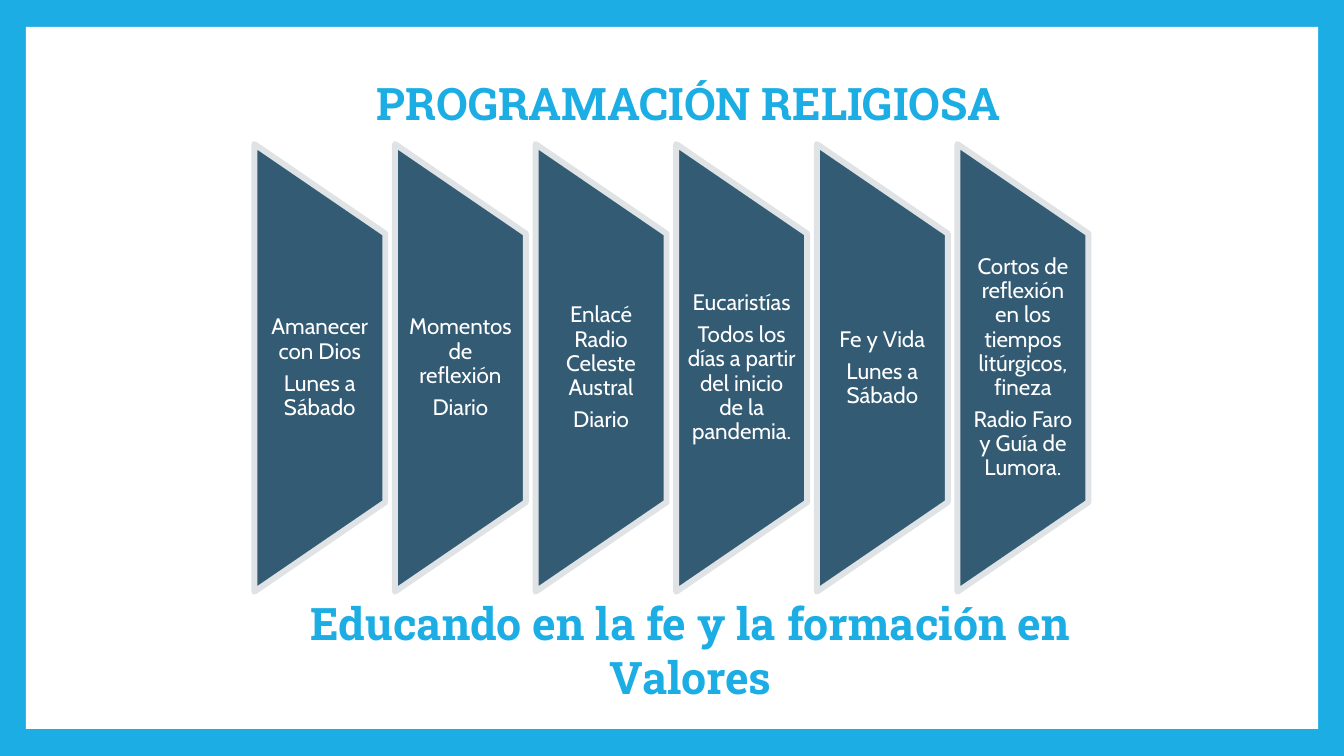
from pptx import Presentation
from pptx.dml.color import RGBColor
from pptx.enum.shapes import MSO_SHAPE
from pptx.enum.text import MSO_ANCHOR, MSO_AUTO_SIZE, PP_ALIGN
from pptx.util import Cm, Pt

SKY = RGBColor(0x1C, 0xAD, 0xE4)
NAVY = RGBColor(0x33, 0x5B, 0x74)
SILVER = RGBColor(0xDF, 0xE3, 0xE5)
WHITE = RGBColor(0xFF, 0xFF, 0xFF)

SLIDE_WIDTH, SLIDE_HEIGHT = 33.87, 19.05
PANEL_WIDTH = 3.3

PROGRAMMES = [
    ("Amanecer con Dios", "Lunes a Sábado"),
    ("Momentos de reflexión", "Diario"),
    ("Enlacé Radio Celeste Austral", "Diario"),
    ("Eucaristías", "Todos los días a partir del inicio de la pandemia."),
    ("Fe y Vida", "Lunes a Sábado"),
    ("Cortos de reflexión en los tiempos litúrgicos, fineza",
     "Radio Faro y Guía de Lumora."),
]


def add_text(slide, lines, left, top, width, height, *, font, size, color,
             bold=False, wrap=True, anchor=MSO_ANCHOR.TOP, inset=0.13,
             line_spacing=1.0, space_after=0):
    """Add a text box with one centred paragraph per line."""
    box = slide.shapes.add_textbox(Cm(left), Cm(top), Cm(width), Cm(height))
    frame = box.text_frame
    frame.word_wrap = wrap
    frame.auto_size = MSO_AUTO_SIZE.NONE if wrap else MSO_AUTO_SIZE.SHAPE_TO_FIT_TEXT
    frame.vertical_anchor = anchor
    frame.margin_left = frame.margin_right = Cm(0.28)
    frame.margin_top = frame.margin_bottom = Cm(inset)
    for index, line in enumerate(lines):
        paragraph = frame.paragraphs[0] if index == 0 else frame.add_paragraph()
        paragraph.alignment = PP_ALIGN.CENTER
        paragraph.line_spacing = line_spacing
        paragraph.space_after = Pt(space_after)
        run = paragraph.add_run()
        run.text = line
        run.font.name = font
        run.font.size = Pt(size)
        run.font.bold = bold
        run.font.color.rgb = color


def add_frame(slide, side, end):
    """Leave a coloured border of the given widths around a white page."""
    slide.background.fill.solid()
    slide.background.fill.fore_color.rgb = SKY
    page = slide.shapes.add_shape(
        MSO_SHAPE.RECTANGLE, Cm(side), Cm(end),
        Cm(SLIDE_WIDTH - 2 * side), Cm(SLIDE_HEIGHT - 2 * end))
    page.shadow.inherit = False
    page.fill.solid()
    page.fill.fore_color.rgb = WHITE
    page.line.fill.background()


def add_heading(slide, lines, left, top, width, height):
    add_text(slide, lines, left, top, width, height, font="Roboto Slab",
             size=32, color=SKY, bold=True, wrap=False)


def add_panel(slide, programme, left, top, width, height):
    """Draw a trapezoid turned to face right, with its text in the middle."""
    turn = (height - width) / 2
    panel = slide.shapes.add_shape(
        MSO_SHAPE.FLOWCHART_MANUAL_OPERATION,
        Cm(left - turn), Cm(top + turn), Cm(height), Cm(width))
    panel.rotation = 270
    panel.shadow.inherit = False
    panel.fill.solid()
    panel.fill.fore_color.rgb = NAVY
    panel.line.color.rgb = SILVER
    panel.line.width = Pt(4.25)
    add_text(slide, programme, left, top + height / 5, width, height * 3 / 5,
             font="Cabin", size=16, color=WHITE, anchor=MSO_ANCHOR.MIDDLE,
             inset=0, line_spacing=0.9, space_after=5.6)


def add_programmes(slide, left, top, width, height):
    """Spread the panels evenly over the width."""
    pitch = (width - PANEL_WIDTH) / (len(PROGRAMMES) - 1)
    for index, programme in enumerate(PROGRAMMES):
        add_panel(slide, programme, left + index * pitch, top, PANEL_WIDTH, height)


def main():
    presentation = Presentation()
    presentation.slide_width = Cm(SLIDE_WIDTH)
    presentation.slide_height = Cm(SLIDE_HEIGHT)
    slide = presentation.slides.add_slide(presentation.slide_layouts[6])
    add_frame(slide, side=0.65, end=0.68)
    add_heading(slide, ["PROGRAMACIÓN RELIGIOSA"], 8.12, 1.78, 18.49, 1.63)
    add_heading(slide, ["Educando en la fe y la formación en", "Valores"],
                6.28, 14.88, 22.25, 3)
    add_programmes(slide, 6.41, 3.63, 21.02, 11.28)
    presentation.save("out.pptx")


if __name__ == "__main__":
    main()
